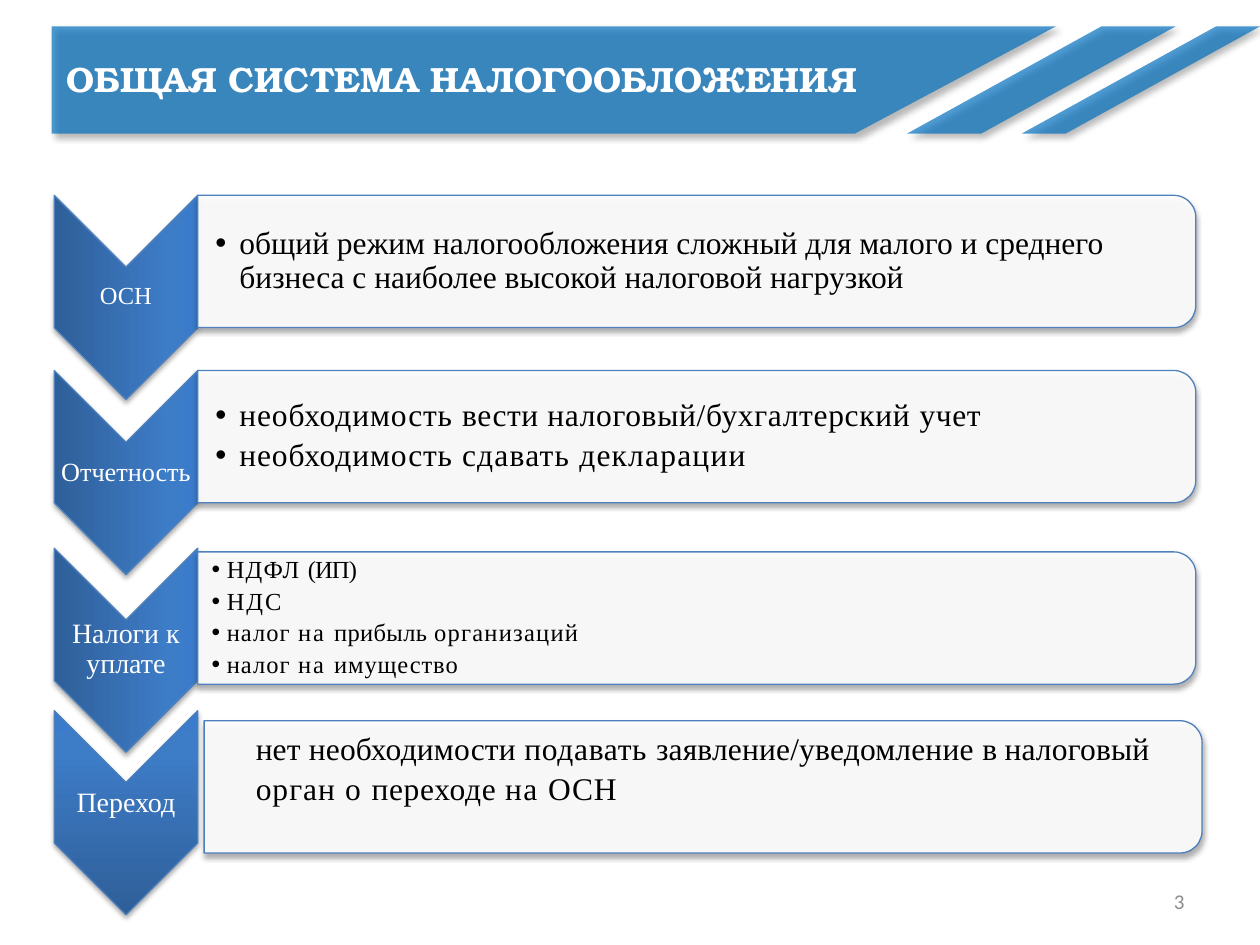
from dataclasses import dataclass

import lxml.etree
import pptx
import pptx.dml.color
import pptx.enum.shapes
import pptx.enum.text
import pptx.oxml.ns
import pptx.util

Inches = pptx.util.Inches
Pt = pptx.util.Pt
Shapes = pptx.enum.shapes.MSO_SHAPE
Anchor = pptx.enum.text.MSO_ANCHOR
Align = pptx.enum.text.PP_ALIGN
qn = pptx.oxml.ns.qn

SERIF = "Times New Roman"
BANNER_SHADOW = {"opacity": 40, "blur": 4, "distance": 3, "angle": 45}
STEP_SHADOW = {"opacity": 35, "blur": 3.1, "distance": 1.8, "angle": 90}
GRADIENT = [(0, "2F5F99"), (80, "3D7CC7"), (100, "3A7CCB")]

# A run is its text and its character spacing in points
Run = tuple[str, float]


@dataclass
class Step:
    label: str
    label_size: float
    label_top: float
    chevron_top: float
    panel_top: float
    paragraphs: list[list[Run]]
    text_box: tuple[float, float, float, float]
    text_size: float = 18
    inset: float = 0.14
    indent: float = 0.19
    line_spacing: float = 0.9
    panel_left: float = 1.57
    line: str = "4F81BD"
    bulleted: bool = True
    gradient_turns: bool = True


STEPS = [
    Step("ОСН", 14, 2.11, 1.55, 1.55,
         [[("общий режим налогообложения сложный для малого и среднего "
            "бизнеса с наиболее высокой налоговой нагрузкой", 0)]],
         (1.57, 1.6, 7.87, 0.95)),
    Step("Отчетность", 15, 3.51, 2.94, 2.94,
         [[("необходимость ", 0.5), ("вести ", 0.3),
           ("налоговый/бухгалтерский ", 0.4), ("учет", 0.3)],
          [("необходимость ", 0.5), ("сдавать декларации", 0.7)]],
         (1.57, 2.99, 7.87, 0.95)),
    Step("Налоги к уплате", 16, 4.91, 4.35, 4.38,
         [[("НДФЛ ", 0.7), ("(ИП)", -0.5)],
          [("НДС", 1.1)],
          [("налог ", 0.6), ("на ", 1.1), ("прибыль ", 0.2), ("организаций", 0.7)],
          [("налог ", 0.6), ("на ", 1.1), ("имущество", 0.5)]],
         (1.57, 4.43, 7.87, 0.95), text_size=14, inset=0.11, indent=0.12),
    Step("Переход", 16, 6.13, 5.64, 5.72,
         [[("нет необходимости ", 0.1), ("подавать ", 0.4),
           ("заявление/уведомление ", 0.1), ("в ", -0.3), ("налоговый ", 0.1),
           ("орган ", 0.6), ("о ", 0.8), ("переходе ", 0.4), ("на ", 0.8), ("ОСН", 0.5)]],
         (1.93, 5.72, 7.48, 0.71), inset=0.1, indent=0, line_spacing=1.05,
         panel_left=1.62, line="4B7EBC", bulleted=False, gradient_turns=False),
]


def color(value: str) -> pptx.dml.color.RGBColor:
    return pptx.dml.color.RGBColor.from_string(value)


def apply_format(target, **values) -> None:
    for name, value in values.items():
        setattr(target, name, value)


def place(shape, left: float, top: float, width: float, height: float) -> None:
    apply_format(shape, left=Inches(left), top=Inches(top),
                 width=Inches(width), height=Inches(height))


def add_child(parent, tag: str, **attributes):
    values = {name: str(value) for name, value in attributes.items()}
    return lxml.etree.SubElement(parent, qn(tag), values)


def add_shadow(shape, opacity: float, blur: float, distance: float, angle: float) -> None:
    shape.shadow.inherit = False
    effects = shape.element.spPr.find(qn("a:effectLst"))
    shadow = add_child(effects, "a:outerShdw", blurRad=int(Pt(blur)),
                       dist=int(Pt(distance)), dir=angle * 60000, rotWithShape=0)
    shadow_color = add_child(shadow, "a:srgbClr", val="000000")
    add_child(shadow_color, "a:alpha", val=opacity * 1000)


def fill_solid(shape, value: str, opacity: int) -> None:
    shape.fill.solid()
    shape.fill.fore_color.rgb = color(value)
    fill_color = shape.element.spPr.find(qn("a:solidFill"))[0]
    add_child(fill_color, "a:alpha", val=opacity * 1000)


def fill_gradient(shape, turns: bool) -> None:
    shape.fill.gradient()
    shape.fill.gradient_angle = 90
    gradient = shape.element.spPr.find(qn("a:gradFill"))
    gradient.set("rotWithShape", str(int(turns)))
    stops = gradient.find(qn("a:gsLst"))
    for stop in list(stops):
        stops.remove(stop)
    for position, value in GRADIENT:
        stop = add_child(stops, "a:gs", pos=position * 1000)
        add_child(stop, "a:srgbClr", val=value)


def add_shape(slide, kind, left: float, top: float, width: float, height: float,
              shadow: dict, line: str | None = None, turned: bool = False):
    """Add a shape by its visible box; a turned one is rotated a quarter."""
    if turned:
        left, top = left + (width - height) / 2, top + (height - width) / 2
        width, height = height, width
    shape = slide.shapes.add_shape(kind, *map(Inches, (left, top, width, height)))
    shape.rotation = 90 if turned else 0
    if line:
        shape.line.color.rgb = color(line)
        shape.line.width = Pt(0.75)
    else:
        shape.line.fill.background()
    add_shadow(shape, **shadow)
    return shape


def set_frame(shape, anchor, left: float = 0.1, vertical: float = 0.05,
              right: float = 0.1) -> None:
    apply_format(shape.text_frame, word_wrap=True, vertical_anchor=anchor,
                 auto_size=pptx.enum.text.MSO_AUTO_SIZE.NONE,
                 margin_left=Inches(left), margin_right=Inches(right),
                 margin_top=Inches(vertical), margin_bottom=Inches(vertical))


def write_run(paragraph, text: str, size: float, name: str, value: str,
              spacing: float = 0, bold: bool = False) -> None:
    run = paragraph.add_run()
    run.text = text
    apply_format(run.font, size=Pt(size), name=name, bold=bold)
    run.font.color.rgb = color(value)
    if spacing:
        run.font._element.set("spc", str(round(spacing * 100)))


def add_banner(slide) -> None:
    banner = add_shape(slide, Shapes.FLOWCHART_MANUAL_INPUT, 0.41, 0.21, 7.97, 0.85,
                       BANNER_SHADOW, turned=True)
    banner.element.spPr.xfrm.set("flipH", "1")
    stripes = [add_shape(slide, Shapes.PARALLELOGRAM, left, 0.21, width, 0.85, BANNER_SHADOW)
               for left, width in ((7.2, 2.13), (8.11, 1.89))]
    for stripe in stripes:
        stripe.adjustments[0] = 1.813
    for shape in [banner, *stripes]:
        fill_solid(shape, "0070C0", 69)


def write_title(slide, text: str) -> None:
    title = slide.shapes.title
    place(title, 0.43, 0.41, 7.28, 0.44)
    set_frame(title, Anchor.TOP)
    paragraph = title.text_frame.paragraphs[0]
    paragraph.alignment = Align.LEFT
    write_run(paragraph, text, 20, "TeX Gyre Bonum", "FFFFFF", bold=True)
    slide.shapes.element.append(title.element)  # bring above the banner


def write_body(slide, body, step: Step) -> None:
    place(body, *step.text_box)
    if step.bulleted:
        set_frame(body, Anchor.MIDDLE, step.inset, 0.01, 0.01)
    else:
        set_frame(body, Anchor.TOP)
    for index, runs in enumerate(step.paragraphs):
        frame = body.text_frame
        paragraph = frame.add_paragraph() if index else frame.paragraphs[0]
        apply_format(paragraph, alignment=Align.LEFT, line_spacing=step.line_spacing,
                     space_before=Pt(0), space_after=Pt(0.2 * step.text_size))
        properties = paragraph._p.get_or_add_pPr()
        properties.set("marL", str(int(Inches(step.indent))))
        properties.set("indent", str(-int(Inches(step.indent))))
        if step.bulleted:
            add_child(properties, "a:buChar", char="•")
        else:
            add_child(properties, "a:buNone")
        for text, spacing in runs:
            write_run(paragraph, text, step.text_size, SERIF, "000000", spacing)
    slide.shapes.element.append(body.element)  # bring above the panel


def add_step(slide, body, step: Step) -> None:
    chevron = add_shape(slide, Shapes.CHEVRON, 0.43, step.chevron_top, 1.14, 1.62,
                        STEP_SHADOW, step.line, turned=True)
    fill_gradient(chevron, step.gradient_turns)
    label = slide.shapes.add_textbox(*map(Inches, (0.43, step.label_top, 1.14, 0.49)))
    set_frame(label, Anchor.MIDDLE, 0.01, 0.01, 0.01)
    paragraph = label.text_frame.paragraphs[0]
    apply_format(paragraph, alignment=Align.CENTER, line_spacing=0.9)
    write_run(paragraph, step.label, step.label_size, SERIF, "FFFFFF")
    panel = add_shape(slide, Shapes.ROUND_2_SAME_RECTANGLE, step.panel_left, step.panel_top,
                      7.92, 1.05, STEP_SHADOW, step.line, turned=True)
    fill_solid(panel, "FFFFFF", 90)
    write_body(slide, body, step)


def add_page_number(slide, number: str) -> None:
    box = slide.shapes.add_textbox(*map(Inches, (7.17, 6.95, 2.33, 0.4)))
    set_frame(box, Anchor.MIDDLE)
    paragraph = box.text_frame.paragraphs[0]
    paragraph.alignment = Align.RIGHT
    write_run(paragraph, number, 12, "Calibri", "8C8C8C")


def main() -> None:
    presentation = pptx.Presentation()
    presentation.slide_width, presentation.slide_height = Inches(10), Inches(7.5)
    # The comparison layout has a title and four body placeholders
    slide = presentation.slides.add_slide(presentation.slide_layouts[4])
    bodies = [shape for shape in slide.placeholders if shape.placeholder_format.idx > 0]
    add_banner(slide)
    write_title(slide, "ОБЩАЯ СИСТЕМА НАЛОГООБЛОЖЕНИЯ")
    for body, step in zip(bodies, STEPS):
        add_step(slide, body, step)
    add_page_number(slide, "3")
    presentation.save("out.pptx")


if __name__ == "__main__":
    main()
